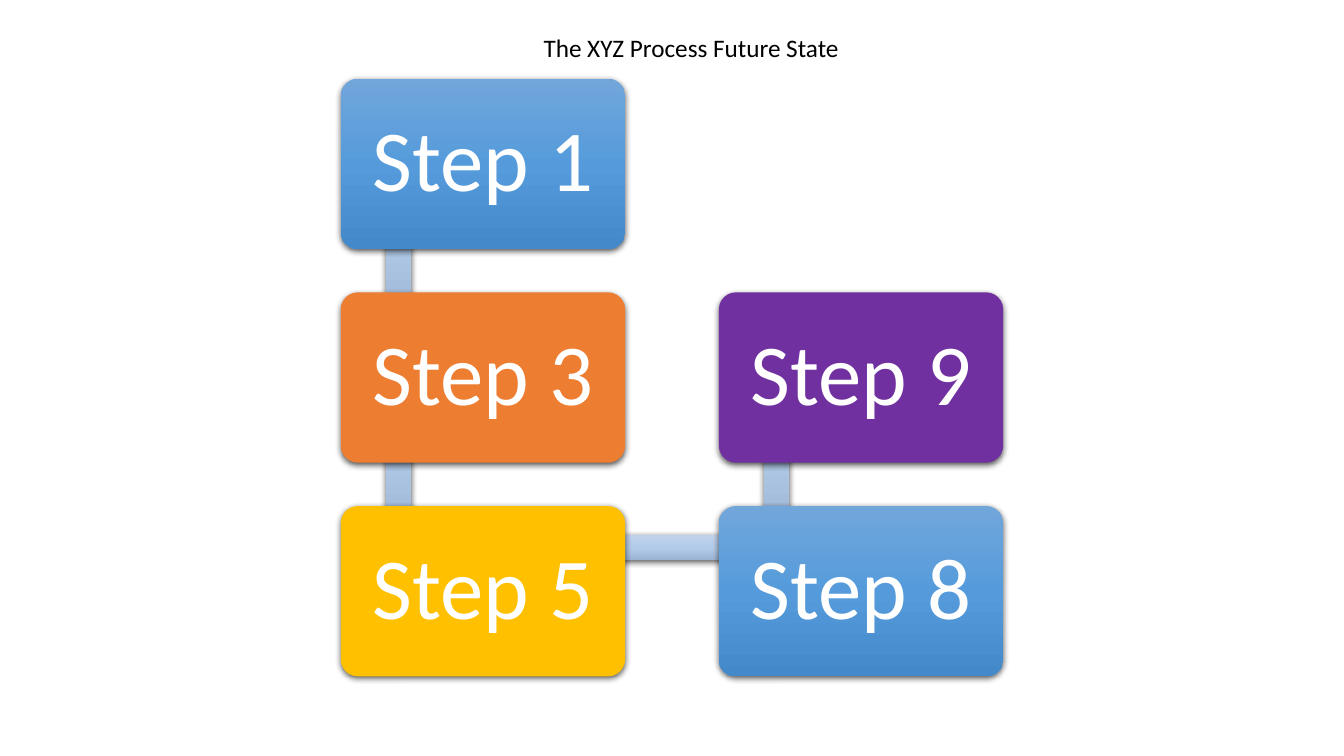
from dataclasses import dataclass

from pptx import Presentation
from pptx import util as u
from pptx.dml.color import RGBColor
from pptx.enum import shapes, text
from pptx.oxml import parse_xml
from pptx.oxml.ns import nsdecls, qn


@dataclass(frozen=True)
class Theme:
    font: str = "Calibri"
    title_size: int = 18
    step_size: int = 62
    black: str = "000000"
    white: str = "FFFFFF"
    orange: str = "ED7D31"
    gold: str = "FFC000"
    purple: str = "7030A0"
    blue: tuple = ("71A6DB", "559BDB", "448ACA")
    pale_blue: tuple = ("C0D2EB", "B3CBE9", "9BB4D3")


class ProcessSlide:
    LEFT, TOP = 3.38, 0.78
    COL_STEP, ROW_STEP = 3.75, 2.12
    STEP_W, STEP_H = 2.82, 1.69
    BAR_H = 0.25

    def __init__(self, prs, theme):
        self.theme = theme
        self.s = prs.slides.add_slide(prs.slide_layouts[6])

    def cell(self, col, row):
        """Return the top left corner of a grid cell in inches."""
        return self.LEFT + col * self.COL_STEP, self.TOP + row * self.ROW_STEP

    def block(self, kind, x, y, w, h, fill):
        """Add a borderless shape; a tuple of colours gives a vertical gradient."""
        sp = self.s.shapes.add_shape(kind, *map(u.Inches, (x, y, w, h)))
        spPr = sp._element.spPr
        if isinstance(fill, tuple):
            stops = "".join(
                f'<a:gs pos="{i * 50000}"><a:srgbClr val="{color}"/></a:gs>'
                for i, color in enumerate(fill))
            spPr.find(qn("a:prstGeom")).addnext(parse_xml(
                f'<a:gradFill {nsdecls("a")} rotWithShape="0"><a:gsLst>{stops}</a:gsLst>'
                '<a:lin ang="5400000" scaled="0"/></a:gradFill>'))
        else:
            sp.fill.solid()
            sp.fill.fore_color.rgb = RGBColor.from_string(fill)
        sp.line.fill.background()
        sp.shadow.inherit = False
        spPr.find(qn("a:effectLst")).append(parse_xml(
            f'<a:outerShdw {nsdecls("a")} blurRad="{u.Pt(4.5)}" dist="{u.Pt(1.5)}" '
            'dir="5400000" algn="ctr" rotWithShape="0">'
            f'<a:srgbClr val="{self.theme.black}"><a:alpha val="63000"/></a:srgbClr>'
            '</a:outerShdw>'))
        return sp

    def label(self, tf, words, size, color):
        tf.word_wrap = True
        p = tf.paragraphs[0]
        p.text = words
        p.alignment = text.PP_ALIGN.CENTER
        font = p.runs[0].font
        font.name, font.size = self.theme.font, u.Pt(size)
        font.color.rgb = RGBColor.from_string(color)
        return p

    def down_bar(self, col, row, rotation):
        """Link a step to the one below it."""
        x, y = self.cell(col, row)
        sp = self.block(shapes.MSO_SHAPE.RECTANGLE, x - 0.48, y + 1.35,
                        2.1, self.BAR_H, self.theme.pale_blue)
        sp.rotation = rotation

    def across_bar(self, col, row):
        """Link a step to the one on its right."""
        x, y = self.cell(col, row)
        self.block(shapes.MSO_SHAPE.RECTANGLE, x + 0.58, y + 0.29,
                   3.74, self.BAR_H, self.theme.pale_blue)

    def step(self, words, col, row, fill):
        sp = self.block(shapes.MSO_SHAPE.ROUNDED_RECTANGLE, *self.cell(col, row),
                        self.STEP_W, self.STEP_H, fill)
        sp.adjustments[0] = 0.1
        tf = sp.text_frame
        tf.margin_left = tf.margin_right = u.Inches(0.26)
        tf.margin_top = tf.margin_bottom = u.Inches(0.26)
        tf.vertical_anchor = text.MSO_ANCHOR.MIDDLE
        p = self.label(tf, words, self.theme.step_size, self.theme.white)
        p.line_spacing = 0.9

    def title(self, words):
        box = self.s.shapes.add_textbox(*map(u.Inches, (2.6, 0.27, 8.51, 0.4)))
        self.label(box.text_frame, words, self.theme.title_size, self.theme.black)


def main():
    prs = Presentation()
    prs.slide_width, prs.slide_height = u.Inches(13.33), u.Inches(7.5)
    theme = Theme()
    slide = ProcessSlide(prs, theme)

    for col, row, rotation in ((0, 0, 90), (0, 1, 90), (1, 1, 270)):
        slide.down_bar(col, row, rotation)
    slide.across_bar(0, 2)

    for words, col, row, fill in (
        ("Step 1", 0, 0, theme.blue),
        ("Step 3", 0, 1, theme.orange),
        ("Step 5", 0, 2, theme.gold),
        ("Step 8", 1, 2, theme.blue),
        ("Step 9", 1, 1, theme.purple),
    ):
        slide.step(words, col, row, fill)

    slide.title("The XYZ Process Future State")
    prs.save("out.pptx")


if __name__ == "__main__":
    main()
